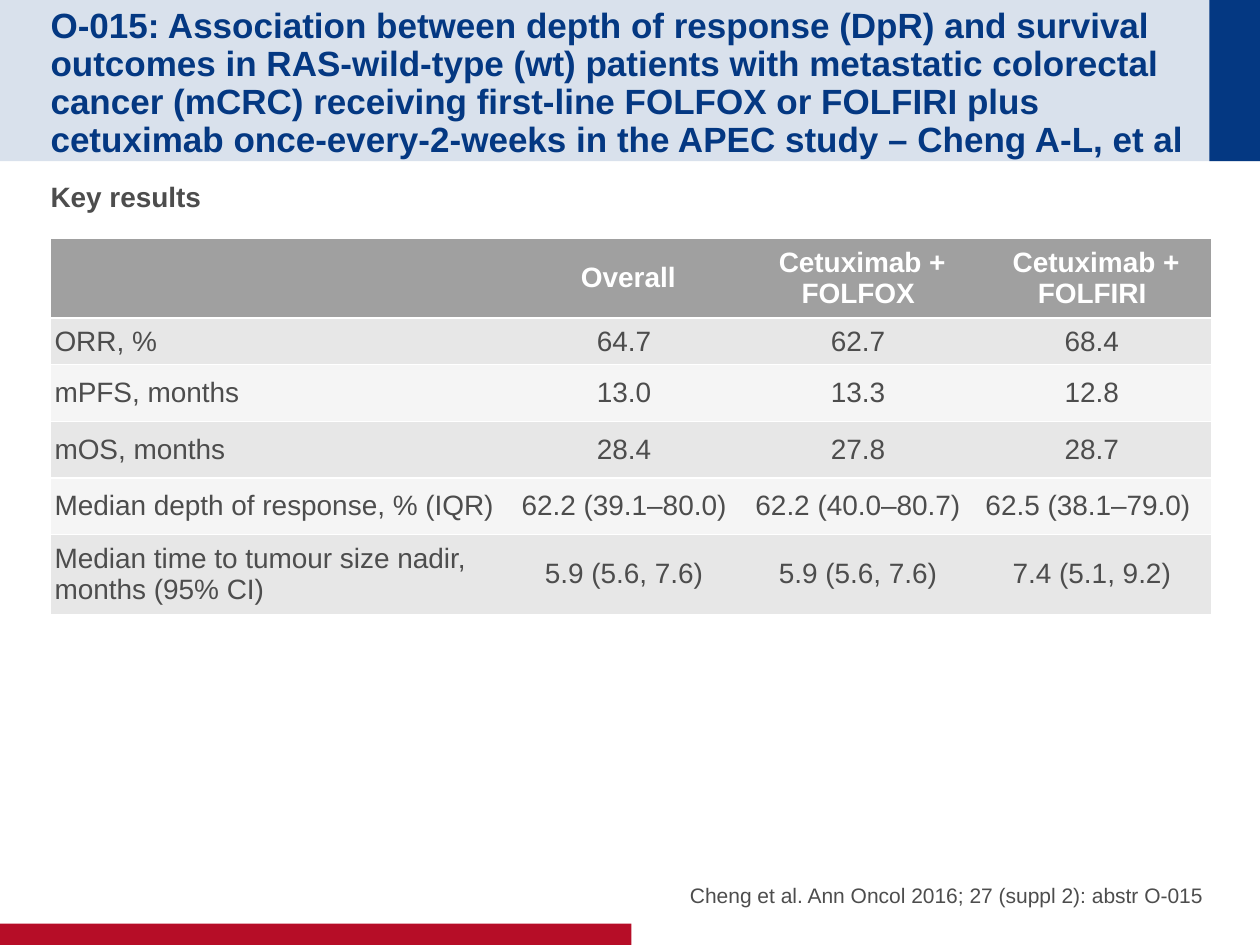
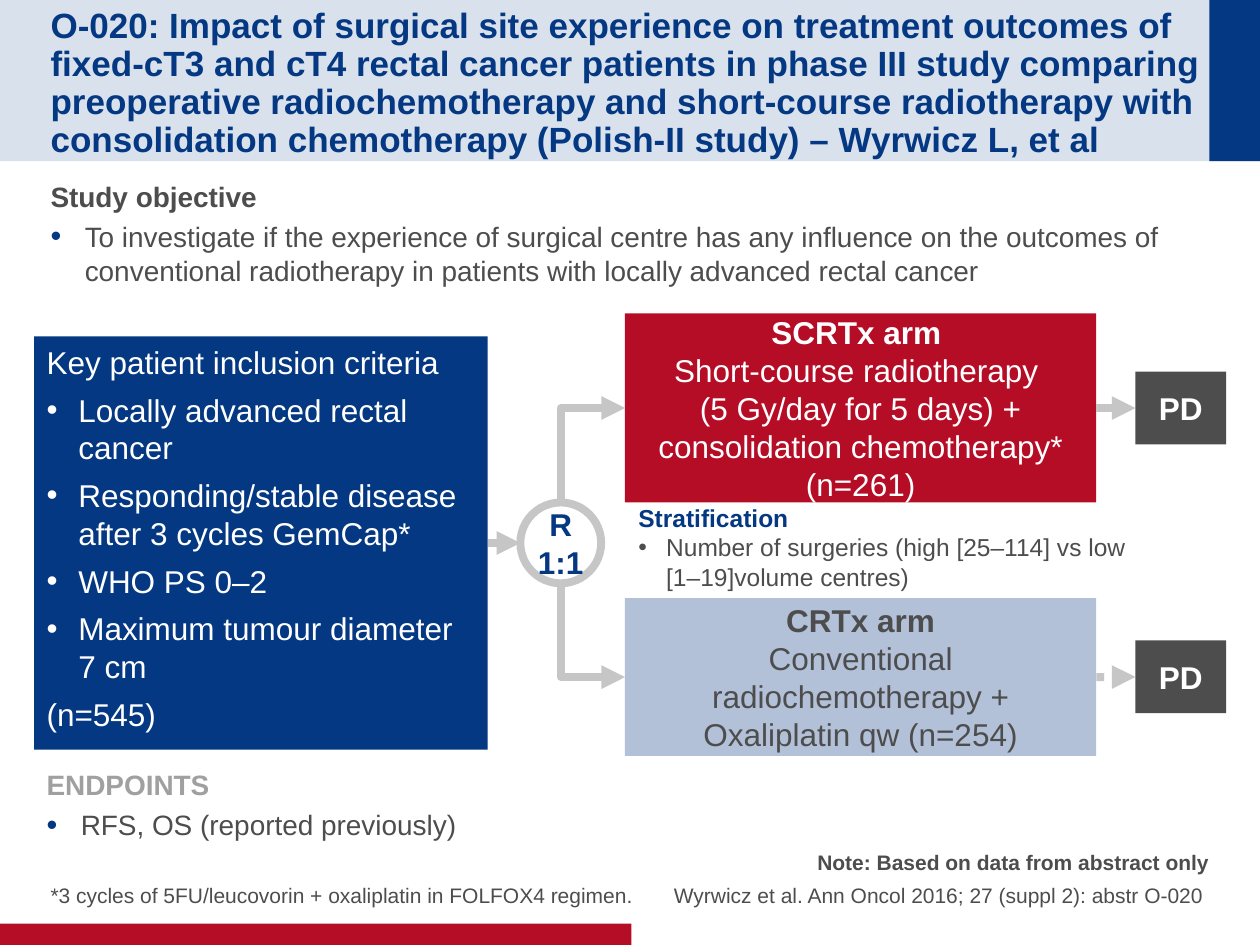
from dataclasses import dataclass, field
from typing import Any, Optional

from lxml import etree
from pptx import Presentation
from pptx.dml.color import RGBColor
from pptx.enum.dml import MSO_LINE
from pptx.enum.shapes import MSO_CONNECTOR, MSO_SHAPE
from pptx.enum.text import MSO_ANCHOR, PP_ALIGN
from pptx.oxml.ns import qn
from pptx.util import Cm, Pt

RECT = MSO_SHAPE.RECTANGLE
ROUNDED = MSO_SHAPE.ROUNDED_RECTANGLE
OVAL = MSO_SHAPE.OVAL
STRAIGHT = MSO_CONNECTOR.STRAIGHT
ELBOW = MSO_CONNECTOR.ELBOW
DOTTED = MSO_LINE.ROUND_DOT
TOP, MIDDLE, BOTTOM = MSO_ANCHOR.TOP, MSO_ANCHOR.MIDDLE, MSO_ANCHOR.BOTTOM
LEFT, CENTER, RIGHT = PP_ALIGN.LEFT, PP_ALIGN.CENTER, PP_ALIGN.RIGHT
LEFT_SIDE, RIGHT_SIDE = 1, 3

FONT = "Arial"
PLAIN_TABLE = "{2D5ABB26-0587-4C30-8999-92F81FD0307C}"
COLORS = {
    "navy": "043882",
    "red": "B60D27",
    "text": "4D4D4D",
    "white": "FFFFFF",
    "band": "D9E1EC",
    "pale_blue": "B2C0D8",
    "arrow": "C6C6C6",
    "gray": "A0A0A0",
    "row_dark": "E7E7E7",
    "row_light": "F5F5F5",
}

Area = tuple[float, float, float, float]
Inset = tuple[float, float, float, float]
BODY_INSET: Inset = (0, 0.13, 0, 0.13)
BOX_INSET: Inset = (0.25, 0.13, 0.25, 0.13)
ARM_INSET: Inset = (0.25, 0, 0.25, 0)
CELL_INSET: Inset = (0.08, 0.13, 0.25, 0.13)
NO_INSET: Inset = (0, 0, 0, 0)

BODY_AREA: Area = (1.02, 3.48, 23.37, 13.18)
FOOT_TOP, FOOT_HEIGHT = 16.94, 1.35


@dataclass
class Para:
    text: str
    size: float = 16
    bold: bool = False
    color: str = "text"
    align: Any = LEFT
    after: float = 0
    spacing: Optional[float] = None
    indent: float = 0
    bullet: str = ""
    bullet_size: int = 100


@dataclass
class Block:
    area: Area
    paras: list[Para] = field(default_factory=list)
    shape: Any = None
    fill: str = ""
    outline: str = ""
    anchor: Any = TOP
    inset: Inset = BODY_INSET
    wrap: bool = True


def rgb(name: str) -> RGBColor:
    return RGBColor.from_string(COLORS[name])


def assign(target: Any, values: dict[str, Any]) -> None:
    for name, value in values.items():
        setattr(target, name, value)


def add_bullet(para: Any, item: Para) -> None:
    properties = para._p.get_or_add_pPr()
    properties.set("marL", str(Cm(item.indent)))
    properties.set("indent", str(-Cm(item.indent)))
    color = etree.SubElement(properties, qn("a:buClr"))
    etree.SubElement(color, qn("a:srgbClr"), val=COLORS[item.bullet])
    etree.SubElement(properties, qn("a:buSzPct"), val=str(item.bullet_size * 1000))
    etree.SubElement(properties, qn("a:buFont"), typeface=FONT)
    etree.SubElement(properties, qn("a:buChar"), char="•")


def write_paras(frame: Any, items: list[Para]) -> None:
    for index, item in enumerate(items):
        para = frame.add_paragraph() if index else frame.paragraphs[0]
        para.text = item.text
        assign(para, {"alignment": item.align, "space_after": Pt(item.after),
                      "line_spacing": item.spacing})
        if item.bullet:
            add_bullet(para, item)
        for span in para.runs:
            assign(span.font, {"name": FONT, "size": Pt(item.size), "bold": item.bold})
            span.font.color.rgb = rgb(item.color)


def set_margins(target: Any, inset: Inset) -> None:
    sides = ("margin_left", "margin_top", "margin_right", "margin_bottom")
    assign(target, dict(zip(sides, map(Cm, inset))))


def draw_block(page: Any, block: Block) -> Any:
    area = map(Cm, block.area)
    if block.shape is None:
        box = page.shapes.add_textbox(*area)
    else:
        box = page.shapes.add_shape(block.shape, *area)
        box.shadow.inherit = False
        if block.shape == ROUNDED:
            box.adjustments[0] = 0
        if block.fill:
            box.fill.solid()
            box.fill.fore_color.rgb = rgb(block.fill)
        else:
            box.fill.background()
        if block.outline:
            box.line.color.rgb = rgb(block.outline)
            box.line.width = Pt(4.5)
        else:
            box.line.fill.background()
    if block.paras:
        frame = box.text_frame
        assign(frame, {"word_wrap": block.wrap, "vertical_anchor": block.anchor})
        set_margins(frame, block.inset)
        write_paras(frame, block.paras)
    return box


def style_arrow(arrow: Any, dash: Any = None) -> None:
    arrow.line.color.rgb = rgb("arrow")
    assign(arrow.line, {"width": Pt(4.5), "dash_style": dash})
    etree.SubElement(arrow.line._get_or_add_ln(), qn("a:tailEnd"), type="triangle")
    etree.SubElement(arrow._element.spPr, qn("a:effectLst"))


def draw_link(page: Any, source: Any, target: Any, dash: Any = None) -> None:
    middle = source.top + source.height // 2
    arrow = page.shapes.add_connector(
        STRAIGHT, source.left + source.width, middle, target.left, middle)
    arrow.begin_connect(source, RIGHT_SIDE)
    if target.auto_shape_type == RECT:
        arrow.end_connect(target, LEFT_SIDE)
    style_arrow(arrow, dash)


def draw_branch(page: Any, circle: Any, arm: Any) -> None:
    start_x = circle.left + circle.width // 2
    end_y = arm.top + arm.height // 2
    upward = end_y < circle.top
    start_y = circle.top if upward else circle.top + circle.height
    run, rise = arm.left - start_x, abs(end_y - start_y)
    left = (start_x + arm.left - rise) // 2
    top = (start_y + end_y - run) // 2
    begin_y, finish_y = (top + run, top) if upward else (top, top + run)
    arrow = page.shapes.add_connector(ELBOW, left + rise, begin_y, left, finish_y)
    properties = arrow._element.spPr
    properties.find(qn("a:xfrm")).set("rot", str((90 if upward else 270) * 60000))
    properties.find(qn("a:prstGeom")).set("prst", "bentConnector2")
    style_arrow(arrow)


def add_page(deck: Any, title: str, title_width: float) -> Any:
    page = deck.slides.add_slide(deck.slide_layouts[6])
    heading = Para(title, 20, True, "navy", spacing=0.9)
    for block in (
        Block((0, 0, 25.4, 3.25), shape=RECT, fill="band"),
        Block((24.38, 0, 1.02, 3.25), shape=RECT, fill="navy"),
        Block((0, 18.62, 12.73, 0.43), shape=RECT, fill="red"),
        Block((1.02, 0.51, title_width, 2.24), [heading], anchor=MIDDLE,
              inset=(0, 0.13, 0, 0)),
    ):
        draw_block(page, block)
    return page


def draw_footer(page: Any, left: float, width: float, paras: list[Para]) -> None:
    draw_block(page, Block((left, FOOT_TOP, width, FOOT_HEIGHT), paras,
                           anchor=BOTTOM, inset=NO_INSET))


def draw_results_table(page: Any) -> None:
    rows = [
        ("", "Overall", "Cetuximab + FOLFOX ", "Cetuximab + FOLFIRI "),
        ("ORR, %", "64.7", "62.7", "68.4"),
        ("mPFS, months", "13.0", "13.3", "12.8"),
        ("mOS, months", "28.4", "27.8", "28.7"),
        ("Median depth of response, % (IQR)", "62.2 (39.1–80.0)",
         "62.2 (40.0–80.7)", "62.5 (38.1–79.0) "),
        ("Median time to tumour size nadir, months (95% CI)", "5.9 (5.6, 7.6)",
         "5.9 (5.6, 7.6)", "7.4 (5.1, 9.2)"),
    ]
    widths = (9.32, 4.65, 4.78, 4.65)
    heights = (1.6, 0.91, 1.14, 1.14, 1.14, 1.52)
    fills = ("gray", "row_dark", "row_light", "row_dark", "row_light", "row_dark")
    holder = page.shapes.add_table(
        len(rows), len(widths), Cm(1.02), Cm(4.8), Cm(sum(widths)), Cm(sum(heights)))
    table = holder.table
    assign(table, {"first_row": False, "horz_banding": False})
    next(holder._element.iter(qn("a:tableStyleId"))).text = PLAIN_TABLE
    for column, width in zip(table.columns, widths):
        column.width = Cm(width)
    for row_index, texts in enumerate(rows):
        table.rows[row_index].height = Cm(heights[row_index])
        header = row_index == 0
        for column_index, text in enumerate(texts):
            cell = table.cell(row_index, column_index)
            cell.vertical_anchor = MIDDLE
            set_margins(cell, BOX_INSET if header else CELL_INSET)
            write_paras(cell.text_frame, [Para(
                text, bold=header, color="white" if header else "text",
                align=CENTER if column_index else LEFT)])
            for side in ("a:lnT", "a:lnB"):
                border = etree.SubElement(
                    cell._tc.get_or_add_tcPr(), qn(side), w=str(Pt(1)))
                paint = etree.SubElement(border, qn("a:solidFill"))
                etree.SubElement(paint, qn("a:srgbClr"), val=COLORS["white"])
            cell.fill.solid()
            cell.fill.fore_color.rgb = rgb(fills[row_index])


def build_results(deck: Any) -> None:
    page = add_page(
        deck,
        "O-015: Association between depth of response (DpR) and survival outcomes in "
        "RAS-wild-type (wt) patients with metastatic colorectal cancer (mCRC) receiving "
        "first-line FOLFOX or FOLFIRI plus cetuximab once-every-2-weeks in the APEC "
        "study – Cheng A-L, et al", 22.89)
    draw_block(page, Block(BODY_AREA, [Para("Key results", bold=True, after=4)]))
    draw_footer(page, 11.35, 13.03, [Para(
        "Cheng et al. Ann Oncol 2016; 27 (suppl 2): abstr O-015 ", 12,
        align=RIGHT, after=4)])
    draw_results_table(page)


def draw_arm(page: Any, top: float, height: float, fill: str, color: str,
             name: str, treatment: str) -> Any:
    return draw_block(page, Block(
        (12.6, top, 9.5, height),
        [Para(name, 18, True, color, CENTER), Para(treatment, 18, False, color, CENTER)],
        RECT, fill, anchor=MIDDLE, inset=ARM_INSET))


def build_study_design(deck: Any) -> None:
    page = add_page(
        deck,
        "O-020: Impact of surgical site experience on treatment outcomes of fixed-cT3 and "
        "cT4 rectal cancer patients in phase III study comparing preoperative "
        "radiochemotherapy and short-course radiotherapy with consolidation chemotherapy "
        "(Polish-II study) – Wyrwicz L, et al", 23.37)
    draw_footer(page, 1.02, 12.4, [Para(
        "*3 cycles of 5FU/leucovorin + oxaliplatin in FOLFOX4 regimen.", 12, after=4)])
    draw_footer(page, 12.9, 11.48, [
        Para("Note: Based on data from abstract only", 12, True, align=RIGHT, after=4),
        Para("Wyrwicz et al. Ann Oncol 2016; 27 (suppl 2): abstr O-020 ", 12,
             align=RIGHT, after=4)])
    body_bullet = {"after": 4, "indent": 0.69, "bullet": "navy", "bullet_size": 110}
    draw_block(page, Block(BODY_AREA, [
        Para("Study objective", bold=True, after=4),
        Para("To investigate if the experience of surgical centre has any influence on the "
             "outcomes of conventional radiotherapy in patients with locally advanced "
             "rectal cancer", **body_bullet)]))
    draw_block(page, Block((0.94, 15.34, 11.48, 1.07), [
        Para("ENDPOINTS", bold=True, color="gray", after=4),
        Para("RFS, OS (reported previously)", **body_bullet)]))
    draw_block(page, Block((12.62, 10.01, 10.82, 2.49), [
        Para("Stratification", 14, True, "navy"),
        Para("Number of surgeries (high [25–114] vs low [1–19]volume centres)", 14,
             indent=0.56, bullet="text")], inset=BOX_INSET))

    criterion = {"size": 18, "color": "white", "after": 5.7}
    criteria = draw_block(page, Block(
        (0.69, 6.78, 9.14, 8.33),
        [Para("Key patient inclusion criteria", **criterion)]
        + [Para(text, indent=0.64, bullet="white", **criterion) for text in (
            "Locally advanced rectal cancer",
            "Responding/stable disease after 3 cycles GemCap*",
            "WHO PS 0–2",
            "Maximum tumour diameter 7 cm")]
        + [Para("(n=545)", **criterion)],
        ROUNDED, "navy", inset=BOX_INSET))
    circle = draw_block(page, Block(
        (10.49, 10.13, 1.63, 1.63),
        [Para(text, 18, True, "navy", CENTER) for text in ("R", "1:1")],
        OVAL, outline="arrow", anchor=MIDDLE, inset=BOX_INSET, wrap=False))
    draw_link(page, criteria, circle)

    short_course = draw_arm(
        page, 6.32, 3.81, "red", "white", "SCRTx arm ",
        "Short-course radiotherapy \n(5 Gy/day for 5 days) + consolidation "
        "chemotherapy* (n=261)")
    conventional = draw_arm(
        page, 12.06, 3.18, "pale_blue", "text", "CRTx arm",
        "Conventional radiochemotherapy + Oxaliplatin qw (n=254)")
    for arm, top, dash in ((short_course, 7.49, None), (conventional, 12.91, DOTTED)):
        progression = draw_block(page, Block(
            (22.89, top, 1.83, 1.47), [Para("PD", 18, True, "white", CENTER)],
            RECT, "text", anchor=MIDDLE, inset=ARM_INSET))
        draw_branch(page, circle, arm)
        draw_link(page, arm, progression, dash)


def main() -> None:
    deck = Presentation()
    assign(deck, {"slide_width": Cm(25.4), "slide_height": Cm(19.05)})
    build_results(deck)
    build_study_design(deck)
    deck.save("out.pptx")


if __name__ == "__main__":
    main()
